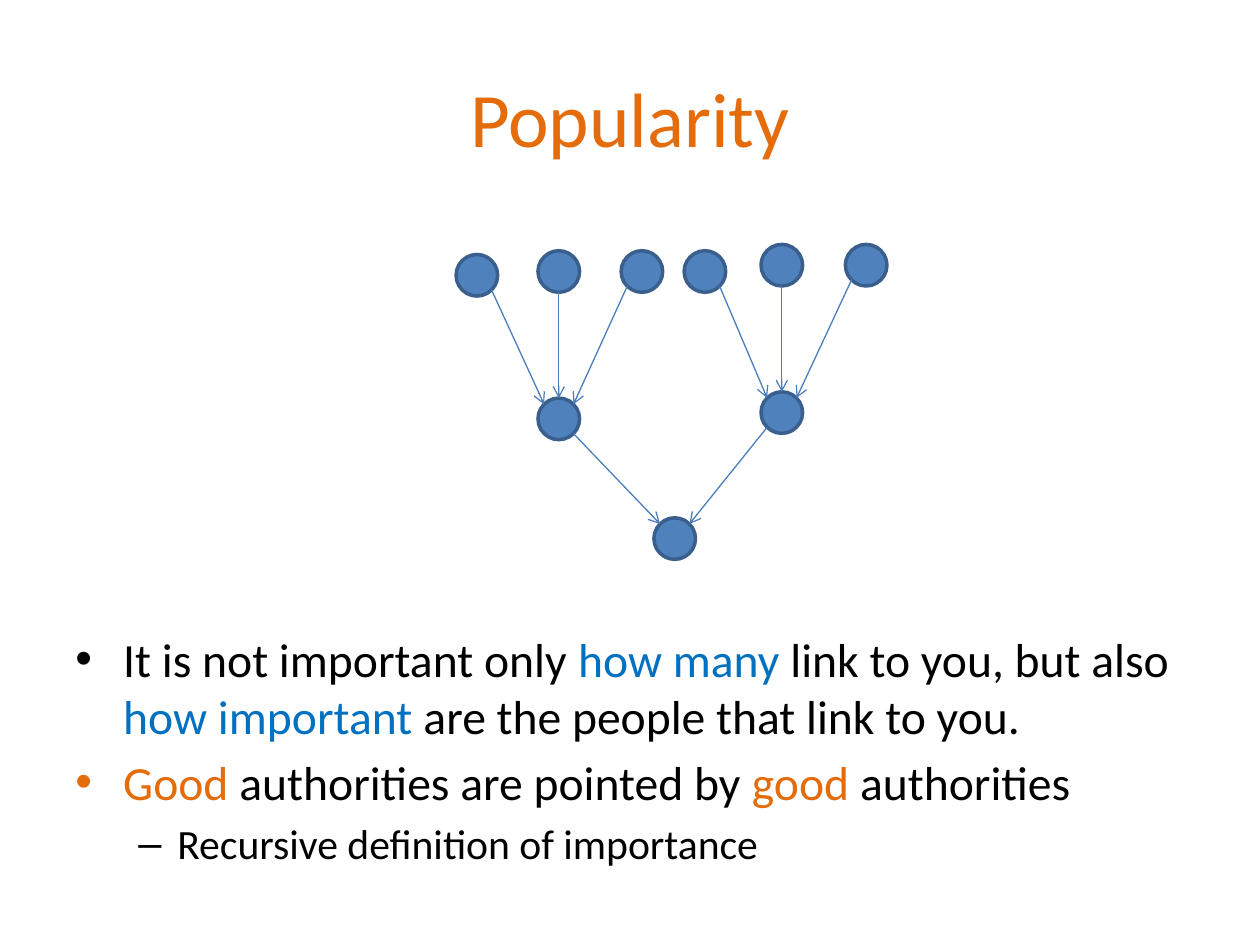
from math import sqrt

from lxml.etree import SubElement
from pptx import Presentation
from pptx.dml.color import RGBColor
from pptx.enum.shapes import MSO_CONNECTOR, MSO_SHAPE
from pptx.enum.text import MSO_ANCHOR, PP_ALIGN
from pptx.oxml.ns import qn
from pptx.util import Inches, Pt

COLORS = {
    "orange": "E46C0A",
    "blue": "0070C0",
    "black": "000000",
    "node": "4F81BD",
    "node_line": "3A5F8C",
    "arrow": "4B7EBC",
}
DIAMETER = 0.33
RADIUS = DIAMETER / 2


def color(name):
    return RGBColor.from_string(COLORS[name])


def add_runs(paragraph, parts, size):
    for text, color_name in parts:
        run = paragraph.add_run()
        run.text = text
        run.font.name = "Calibri"
        run.font.size = Pt(size)
        run.font.color.rgb = color(color_name)


presentation = Presentation()
presentation.slide_width = Inches(10)
presentation.slide_height = Inches(7.5)
slide = presentation.slides.add_slide(presentation.slide_layouts[6])

# Title
title = slide.shapes.add_textbox(Inches(0.5), Inches(0.3), Inches(9), Inches(1.25))
title.text_frame.word_wrap = True
title.text_frame.vertical_anchor = MSO_ANCHOR.MIDDLE
title_paragraph = title.text_frame.paragraphs[0]
title_paragraph.alignment = PP_ALIGN.CENTER
add_runs(title_paragraph, [("Popularity", "orange")], 44)

# Bullets: level, text indent, hanging indent, bullet, size, runs
bullets = [
    (0, 0.38, 0.38, "•", 27.2, [
        ("It is not important only ", "black"),
        ("how many ", "blue"),
        ("link to you, but also ", "black"),
        ("how important ", "blue"),
        ("are the people that link to you.", "black"),
    ]),
    (0, 0.38, 0.38, "•", 27.2, [
        ("Good ", "orange"),
        ("authorities are pointed by ", "black"),
        ("good ", "orange"),
        ("authorities", "black"),
    ]),
    (1, 0.81, 0.31, "–", 23.8, [("Recursive definition of importance", "black")]),
]
body = slide.shapes.add_textbox(Inches(0.5), Inches(4.95), Inches(9), Inches(1.75))
body.text_frame.word_wrap = True
for index, (level, indent, hanging, bullet, size, parts) in enumerate(bullets):
    paragraph = body.text_frame.paragraphs[0] if index == 0 else body.text_frame.add_paragraph()
    paragraph.level = level
    paragraph.space_before = Pt(4.8 if index else 0)
    properties = paragraph._p.get_or_add_pPr()
    properties.set("marL", str(Inches(indent)))
    properties.set("indent", str(-Inches(hanging)))
    SubElement(properties, qn("a:buFont"), typeface="Arial")
    SubElement(properties, qn("a:buChar"), char=bullet)
    add_runs(paragraph, parts, size)

# Link graph: left and top of every node
nodes = {
    "left_1": (3.62, 2.02), "left_2": (4.27, 1.99), "left_3": (4.93, 1.99),
    "right_1": (5.43, 1.99), "right_2": (6.04, 1.94), "right_3": (6.71, 1.94),
    "left_hub": (4.27, 3.16), "right_hub": (6.04, 3.11),
    "authority": (5.19, 4.11),
}
for left, top in nodes.values():
    node = slide.shapes.add_shape(
        MSO_SHAPE.OVAL, Inches(left), Inches(top), Inches(DIAMETER), Inches(DIAMETER))
    node.shadow.inherit = False
    node.fill.solid()
    node.fill.fore_color.rgb = color("node")
    node.line.color.rgb = color("node_line")
    node.line.width = Pt(2)

links = [(f"{side}_{number}", f"{side}_hub") for side in ("left", "right") for number in (1, 2, 3)]
links += [("left_hub", "authority"), ("right_hub", "authority")]
for source, target in links:
    (source_left, source_top), (target_left, target_top) = nodes[source], nodes[target]
    # Slanted links join the circles at 45 degrees, vertical ones at the poles
    direction = (target_left > source_left) - (target_left < source_left)
    reach = RADIUS / sqrt(2) if direction else RADIUS
    shift = direction * reach
    link = slide.shapes.add_connector(
        MSO_CONNECTOR.STRAIGHT,
        Inches(source_left + RADIUS + shift), Inches(source_top + RADIUS + reach),
        Inches(target_left + RADIUS - shift), Inches(target_top + RADIUS - reach))
    link.line.color.rgb = color("arrow")
    link.line.width = Pt(0.75)
    SubElement(link.line._get_or_add_ln(), qn("a:tailEnd"), type="arrow")
    SubElement(link._element.spPr, qn("a:effectLst"))

presentation.save("out.pptx")
